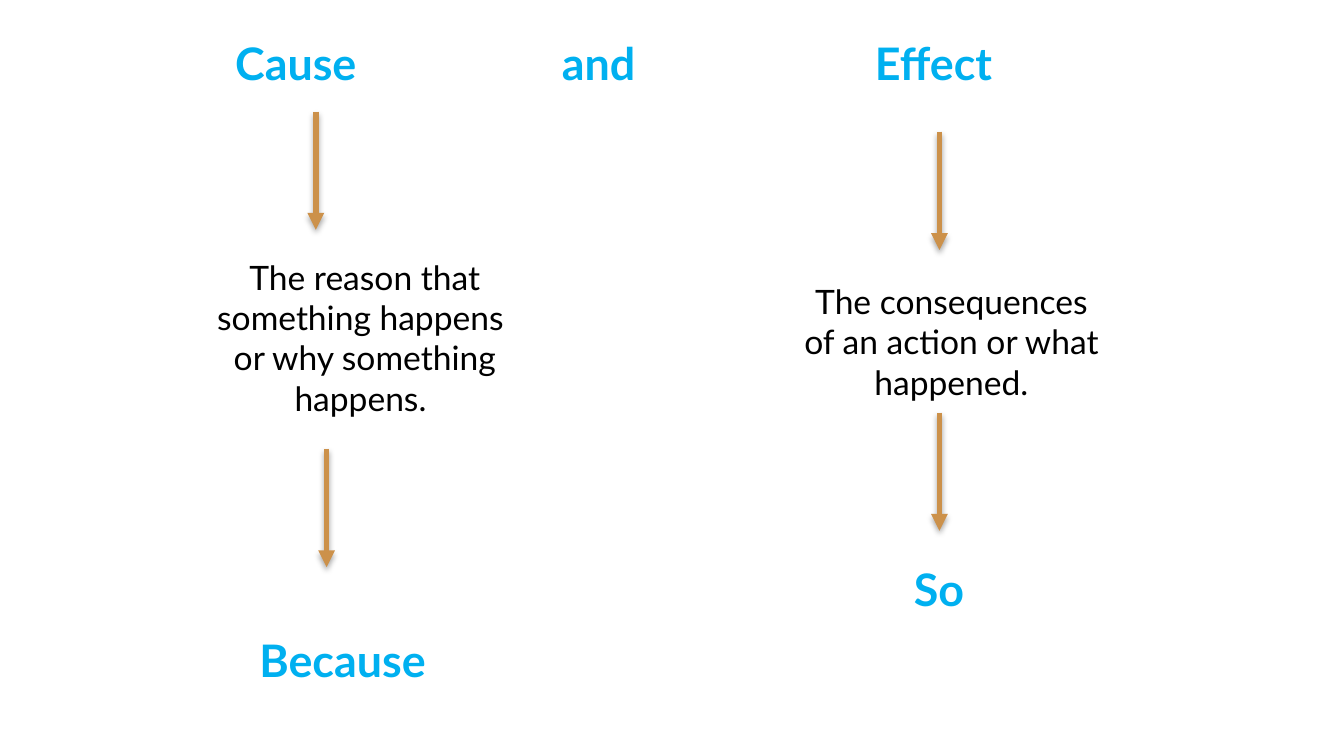
from lxml import etree
from pptx import Presentation
from pptx.dml.color import RGBColor
from pptx.enum.shapes import MSO_CONNECTOR
from pptx.enum.text import MSO_ANCHOR, MSO_AUTO_SIZE, PP_ALIGN
from pptx.oxml import parse_xml
from pptx.oxml.ns import nsdecls, qn
from pptx.util import Inches, Pt

BLUE = RGBColor(0x00, 0xB0, 0xF0)
BLACK = RGBColor(0x00, 0x00, 0x00)
BROWN = RGBColor(0xCC, 0x91, 0x4A)
FONT = "Lato"
STRAIGHT = MSO_CONNECTOR.STRAIGHT
MIDDLE = MSO_ANCHOR.MIDDLE
NO_FIT = MSO_AUTO_SIZE.NONE
LEFT, CENTER = PP_ALIGN.LEFT, PP_ALIGN.CENTER

ARROW_LENGTH = 0.88
SHADOW = (
    f'<a:effectLst {nsdecls("a")}>'
    f'<a:outerShdw blurRad="{Pt(3.1)}" dist="{Pt(1.8)}" dir="5400000" rotWithShape="0">'
    '<a:srgbClr val="000000"><a:alpha val="35000"/></a:srgbClr>'
    '</a:outerShdw></a:effectLst>'
)


def format_text(tf, size, color, bold, align):
    for p in tf.paragraphs:
        p.alignment = align
        for r in p.runs:
            r.font.name = FONT
            r.font.size = Pt(size)
            r.font.bold = bold
            r.font.color.rgb = color


def format_heading(sp, text):
    tf = sp.text_frame
    tf.text = text
    tf.word_wrap = True
    tf.auto_size = NO_FIT
    tf.vertical_anchor = MIDDLE
    tf.margin_left = tf.margin_right = Inches(0.07)
    tf.margin_top = tf.margin_bottom = Inches(0.07)
    format_text(tf, 24, BLUE, True, LEFT)


# Slide in 16:9
prs = Presentation()
prs.slide_width = Inches(10)
prs.slide_height = prs.slide_width * 9 // 16
s = prs.slides.add_slide(prs.slide_layouts[5])

# Title, its three words placed by the left inset and tab stops
title = s.shapes.title
title.left, title.top = Inches(0.86), Inches(0.1)
title.width, title.height = Inches(8.24), Inches(0.73)
format_heading(title, "Cause\tand\tEffect")
title.text_frame.margin_left = Inches(0.89)
pPr = title.text_frame.paragraphs[0]._p.get_or_add_pPr()
tabs = etree.SubElement(pPr, qn("a:tabLst"))
for stop in (2.43, 4.76):
    etree.SubElement(tabs, qn("a:tab"), pos=str(Inches(stop)), algn="l")

# Definitions
definitions = [
    (1.25, 1.86, 2.93, 1.31,
     "The reason that something happens \nor why something happens. "),
    (5.83, 2.04, 2.5, 1.01, "The consequences of an action or what happened."),
]
for x, y, w, h, text in definitions:
    sp = s.shapes.add_textbox(Inches(x), Inches(y), Inches(w), Inches(h))
    tf = sp.text_frame
    tf.word_wrap = True
    tf.text = text
    format_text(tf, 18, BLACK, False, CENTER)

# Arrows
for x, y in [(2.35, 0.83), (6.99, 0.98), (2.43, 3.34), (6.99, 3.07)]:
    arrow = s.shapes.add_connector(
        STRAIGHT, Inches(x), Inches(y), Inches(x), Inches(y + ARROW_LENGTH))
    arrow.line.color.rgb = BROWN
    arrow.line.width = Pt(3)
    etree.SubElement(arrow.line._get_or_add_ln(), qn("a:tailEnd"), type="triangle")
    arrow._element.spPr.append(parse_xml(SHADOW))

# Signal words
for x, y, w, h, text in [(1.86, 4.64, 1.72, 0.54, "Because"),
                         (6.73, 4.12, 0.89, 0.52, "So")]:
    sp = s.shapes.add_textbox(Inches(x), Inches(y), Inches(w), Inches(h))
    format_heading(sp, text)

prs.save("out.pptx")
